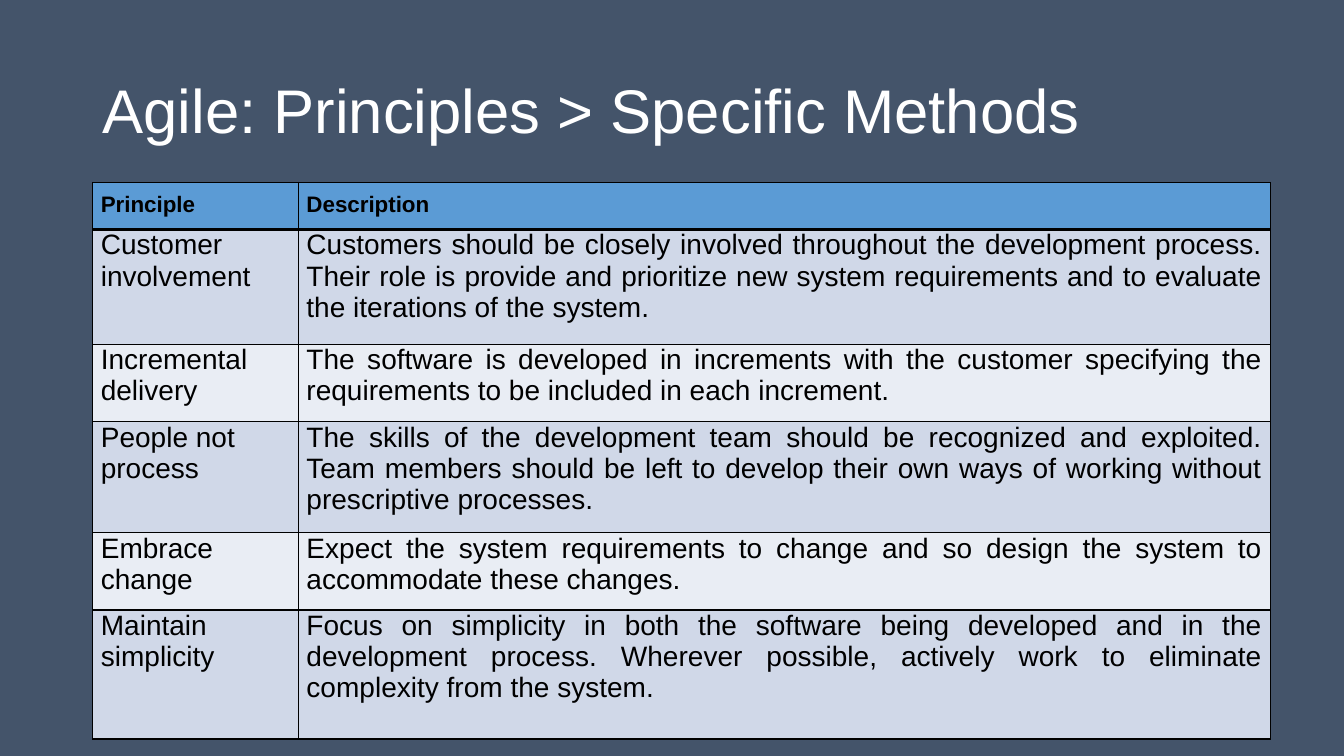
from lxml import etree
from pptx import Presentation
from pptx.dml.color import RGBColor
from pptx.enum import text
from pptx.oxml import ns
from pptx.util import Inches, Pt

WIDTH, HEIGHT = 13.33, 7.5
LEFT = 0.92
FONT = "Arial"
COLORS = {
    "background": "44546A",
    "title": "FFFFFF",
    "text": "000000",
    "border": "000000",
    "header": "5B9BD5",
    "odd": "D0D8E8",
    "even": "E9EDF4",
}
COLUMNS = [2.04, 9.64]
ROWS = [0.45, 1.14, 0.76, 1.05, 0.73, 1.28]
HEADER = ("Principle", "Description")
PRINCIPLES = [
    ("Customer involvement",
     "Customers should be closely involved throughout the development process. "
     "Their role is provide and prioritize new system requirements and to "
     "evaluate the iterations of the system."),
    ("Incremental delivery",
     "The software is developed in increments with the customer specifying the "
     "requirements to be included in each increment."),
    ("People not process",
     "The skills of the development team should be recognized and exploited. "
     "Team members should be left to develop their own ways of working without "
     "prescriptive processes."),
    ("Embrace change",
     "Expect the system requirements to change and so design the system to "
     "accommodate these changes."),
    ("Maintain simplicity",
     "Focus on simplicity in both the software being developed and in the "
     "development process. Wherever possible, actively work to eliminate "
     "complexity from the system."),
]


def color(name):
    return RGBColor.from_string(COLORS[name])


def style_paragraph(paragraph, size, color_name, bold=False):
    font = paragraph.font
    font.name, font.size, font.bold = FONT, Pt(size), bold
    font.color.rgb = color(color_name)


def add_title(slide, wording):
    shape = slide.shapes.add_textbox(
        Inches(LEFT), Inches(0.4), Inches(11.5), Inches(1.45))
    frame = shape.text_frame
    frame.word_wrap = True
    frame.vertical_anchor = text.MSO_ANCHOR.MIDDLE
    paragraph = frame.paragraphs[0]
    paragraph.text = wording
    paragraph.line_spacing = 0.9
    style_paragraph(paragraph, 44, "title")


def set_borders(cell, top, bottom):
    """Line all four sides; top and bottom are widths in points."""
    properties = cell._tc.get_or_add_tcPr()
    widths = {"lnL": 1, "lnR": 1, "lnT": top, "lnB": bottom}
    for position, (side, width) in enumerate(widths.items()):
        line = etree.Element(ns.qn(f"a:{side}"), w=str(Pt(width)))
        fill = etree.SubElement(line, ns.qn("a:solidFill"))
        etree.SubElement(fill, ns.qn("a:srgbClr"), val=COLORS["border"])
        properties.insert(position, line)


def fill_cell(cell, wording, row, column):
    is_header = row == 0
    cell.fill.solid()
    cell.fill.fore_color.rgb = color(
        "header" if is_header else "odd" if row % 2 else "even")
    cell.margin_left = cell.margin_right = Inches(0.08)
    cell.margin_top = Inches(0.1 if is_header else 0)
    cell.margin_bottom = Inches(0.1)
    paragraph = cell.text_frame.paragraphs[0]
    paragraph.text = wording
    justified = is_header or column == 1
    paragraph.alignment = (
        text.PP_ALIGN.JUSTIFY if justified else text.PP_ALIGN.LEFT)
    style_paragraph(paragraph, 16 if is_header else 20, "text", is_header)
    set_borders(cell, top=3 if row == 1 else 1, bottom=3 if is_header else 1)


def add_principles_table(slide):
    table = slide.shapes.add_table(
        len(ROWS), len(COLUMNS), Inches(LEFT), Inches(1.81),
        Inches(sum(COLUMNS)), Inches(sum(ROWS))).table
    table.first_row = table.horz_banding = False
    for column, width in zip(table.columns, COLUMNS):
        column.width = Inches(width)
    for row, height in zip(table.rows, ROWS):
        row.height = Inches(height)
    for row, wordings in enumerate([HEADER, *PRINCIPLES]):
        for column, wording in enumerate(wordings):
            fill_cell(table.cell(row, column), wording, row, column)


def main():
    presentation = Presentation()
    presentation.slide_width = Inches(WIDTH)
    presentation.slide_height = Inches(HEIGHT)
    slide = presentation.slides.add_slide(presentation.slide_layouts[6])
    slide.background.fill.solid()
    slide.background.fill.fore_color.rgb = color("background")
    add_title(slide, "Agile: Principles > Specific Methods")
    add_principles_table(slide)
    presentation.save("out.pptx")


if __name__ == "__main__":
    main()
